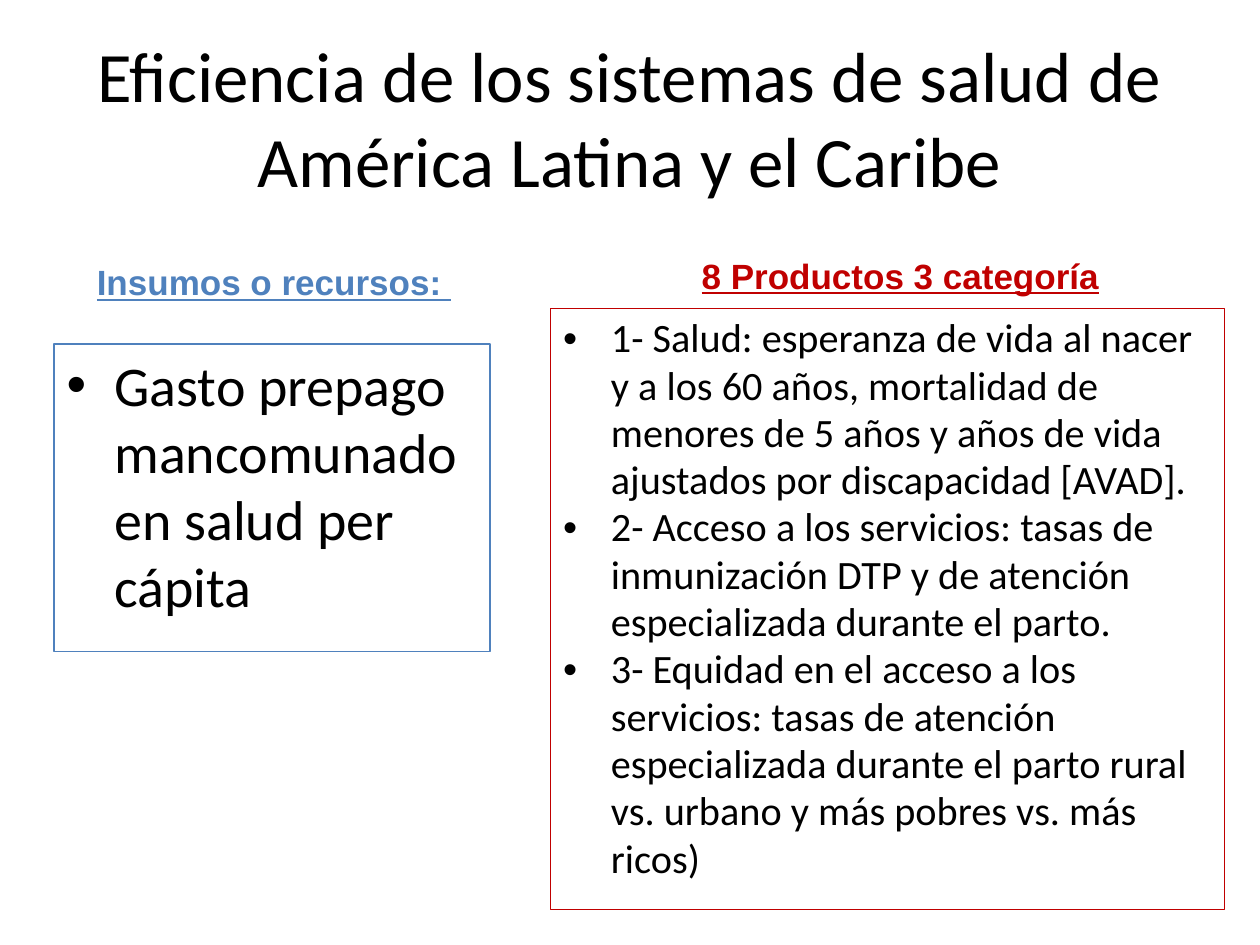
import pptx
import pptx.dml.color
import pptx.enum.shapes
import pptx.enum.text
import pptx.oxml
import pptx.oxml.ns
import pptx.util

Inches = pptx.util.Inches
RGBColor = pptx.dml.color.RGBColor
Align = pptx.enum.text.PP_ALIGN
Anchor = pptx.enum.text.MSO_ANCHOR

BLACK = RGBColor(0x00, 0x00, 0x00)
BLUE = RGBColor(0x4F, 0x81, 0xBD)
RED = RGBColor(0xC0, 0x00, 0x00)

INPUTS = ["Gasto prepago mancomunado en salud per cápita"]
PRODUCTS = [
    "1- Salud: esperanza de vida al nacer y a los 60 años, mortalidad de menores "
    "de 5 años y años de vida ajustados por discapacidad [AVAD].",
    "2- Acceso a los servicios: tasas de inmunización DTP y de atención "
    "especializada durante el parto.",
    "3- Equidad en el acceso a los servicios: tasas de atención especializada "
    "durante el parto rural vs. urbano y más pobres vs. más ricos)",
]


def write(paragraph, text, *, size, font="Calibri", color=BLACK, heading=False,
          align=Align.LEFT, spacing=None, bullet=False):
    paragraph.alignment = align
    paragraph.line_spacing = spacing
    run = paragraph.add_run()
    run.text = text
    run.font.name = font
    run.font.size = pptx.util.Pt(size)
    run.font.color.rgb = color
    if heading:
        run.font.bold = run.font.underline = True
    if bullet:
        properties = paragraph._p.get_or_add_pPr()
        properties.set("marL", str(Inches(0.38)))
        properties.set("indent", str(-Inches(0.38)))
        for tag, name, value in (("a:buFont", "typeface", "Arial"),
                                 ("a:buChar", "char", "•")):
            element = pptx.oxml.parse_xml(f"<{tag} {pptx.oxml.ns.nsdecls('a')}/>")
            element.set(name, value)
            properties.append(element)


class SlideBuilder:
    """Holds the style and the current slide, and adds its elements."""

    title_size = 40.5
    heading_size = 20
    heading_font = "Arial"
    border_width = pptx.util.Pt(0.75)

    def __init__(self, slide):
        self.slide = slide

    def text_box(self, left, top, width, height):
        return self.slide.shapes.add_textbox(
            Inches(left), Inches(top), Inches(width), Inches(height)).text_frame

    def title(self, text, *bounds):
        frame = self.text_box(*bounds)
        frame.word_wrap = True
        frame.vertical_anchor = Anchor.MIDDLE
        write(frame.paragraphs[0], text, size=self.title_size, align=Align.CENTER)

    def heading(self, text, color, *bounds):
        frame = self.text_box(*bounds)
        frame.word_wrap = False
        frame.auto_size = pptx.enum.text.MSO_AUTO_SIZE.SHAPE_TO_FIT_TEXT
        write(frame.paragraphs[0], text, size=self.heading_size,
              font=self.heading_font, color=color, heading=True)

    def bullet_panel(self, items, color, size, *bounds, spacing=None):
        shape = self.slide.shapes.add_shape(
            pptx.enum.shapes.MSO_SHAPE.RECTANGLE, *map(Inches, bounds))
        shape.shadow.inherit = False
        shape.fill.background()
        shape.line.color.rgb = color
        shape.line.width = self.border_width
        frame = shape.text_frame
        frame.word_wrap = True
        frame.vertical_anchor = Anchor.TOP
        for index, item in enumerate(items):
            paragraph = frame.add_paragraph() if index else frame.paragraphs[0]
            write(paragraph, item, size=size, spacing=spacing, bullet=True)


def main():
    presentation = pptx.Presentation()
    presentation.slide_width = Inches(10)
    presentation.slide_height = Inches(7.5)
    builder = SlideBuilder(presentation.slides.add_slide(presentation.slide_layouts[6]))
    builder.title("Eficiencia de los sistemas de salud de América Latina y el Caribe",
                  0.5, 0.3, 9, 1.25)
    builder.bullet_panel(INPUTS, BLUE, 32, 0.43, 2.73, 3.46, 2.44)
    builder.bullet_panel(PRODUCTS, RED, 23, 4.37, 2.45, 5.35, 4.77, spacing=0.98)
    builder.heading("Insumos o recursos: ", BLUE, 0.67, 2.02, 3.04, 0.44)
    builder.heading("8 Productos 3 categoría", RED, 5.47, 1.97, 3.38, 0.44)
    presentation.save("out.pptx")


if __name__ == "__main__":
    main()
